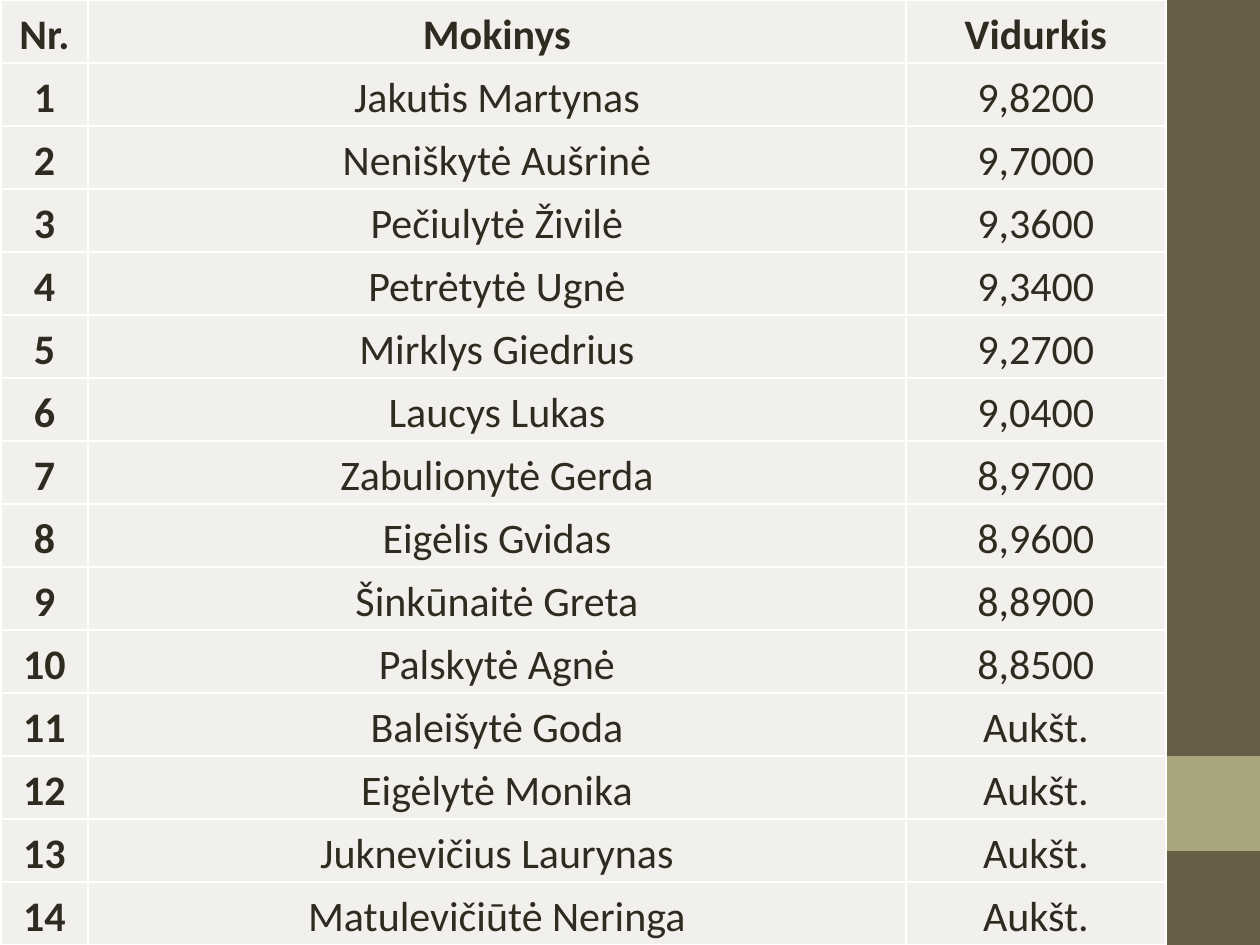
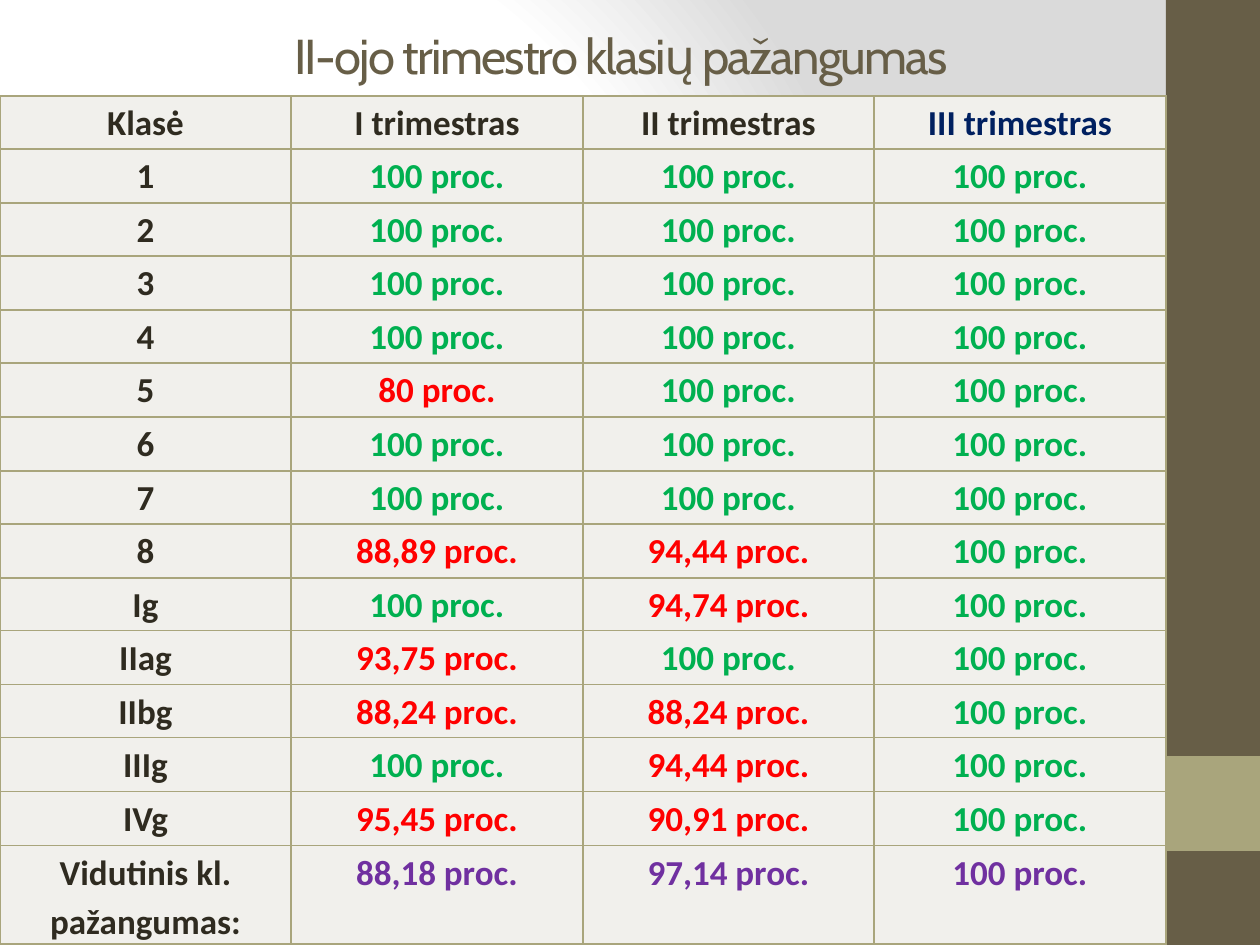
"""Build two school result slides: pupil averages and class progress by trimester."""
from lxml import etree
from pptx import Presentation
from pptx import util as u
from pptx.dml.color import RGBColor
from pptx.enum import shapes, text
from pptx.oxml import parse_xml
from pptx.oxml.ns import nsdecls, qn

THEME = {
    "ink": "2F2B20", "brown": "675E47", "olive": "A9A57C", "cell": "F1F0EC",
    "white": "FFFFFF", "grey": "DADADA", "navy": "002060",
    "full": "00B050", "partial": "FF0000", "average": "7030A0",
    "title_font": "Cabin", "table_font": "Calibri",
    "title_size": 28, "pupil_size": 24, "class_size": 20,
}
PUPILS = [
    ("Jakutis Martynas", "9,8200"), ("Neniškytė Aušrinė", "9,7000"),
    ("Pečiulytė Živilė", "9,3600"), ("Petrėtytė Ugnė", "9,3400"),
    ("Mirklys Giedrius", "9,2700"), ("Laucys Lukas", "9,0400"),
    ("Zabulionytė Gerda", "8,9700"), ("Eigėlis Gvidas", "8,9600"),
    ("Šinkūnaitė Greta", "8,8900"), ("Palskytė Agnė", "8,8500"),
    ("Baleišytė Goda", "Aukšt."), ("Eigėlytė Monika", "Aukšt."),
    ("Juknevičius Laurynas", "Aukšt."), ("Matulevičiūtė Neringa", "Aukšt."),
]
CLASSES = [
    ("1", "100", "100"), ("2", "100", "100"), ("3", "100", "100"),
    ("4", "100", "100"), ("5", "80", "100"), ("6", "100", "100"),
    ("7", "100", "100"), ("8", "88,89", "94,44"), ("Ig", "100", "94,74"),
    ("IIag", "93,75", "100"), ("IIbg", "88,24", "88,24"),
    ("IIIg", "100", "94,44"), ("IVg", "95,45", "90,91"),
    ("Vidutinis kl. pažangumas:", "88,18", "97,14"),
]


def px(n):
    return u.Emu(round(n * 914400 / 126))


def add_grid(s, rows, left, top, widths, heights, size, line, inset, anchor):
    tbl = s.shapes.add_table(len(rows), len(widths), px(left), px(top),
                             px(sum(widths)), px(sum(heights))).table
    tbl.first_row = tbl.horz_banding = False
    for col, w in zip(tbl.columns, widths):
        col.width = px(w)
    for row, h, values in zip(tbl.rows, heights, rows):
        row.height = px(h)
        for cell, value in zip(row.cells, values):
            fmt = {"margin_left": px(inset), "margin_right": px(inset),
                   "margin_top": 0, "margin_bottom": 0, "vertical_anchor": anchor}
            for name, setting in fmt.items():
                setattr(cell, name, setting)
            cell.fill.solid()
            cell.fill.fore_color.rgb = RGBColor.from_string(THEME["cell"])
            pr = cell._tc.get_or_add_tcPr()
            for i, side in enumerate(("lnL", "lnR", "lnT", "lnB")):
                ln = etree.Element(qn("a:" + side), w=str(u.Pt(1)))
                fill = etree.SubElement(ln, qn("a:solidFill"))
                etree.SubElement(fill, qn("a:srgbClr"), val=THEME[line])
                pr.insert(i, ln)
            p = cell.text_frame.paragraphs[0]
            p.alignment = text.PP_ALIGN.CENTER
            p.line_spacing = 1.15
            r = p.add_run()
            r.text = value
            for name, setting in {"name": THEME["table_font"], "bold": True,
                                  "size": u.Pt(THEME[size])}.items():
                setattr(r.font, name, setting)
            r.font.color.rgb = RGBColor.from_string(THEME["ink"])
    return tbl


prs = Presentation()
prs.slide_width, prs.slide_height = px(1260), px(945)
master = prs.slide_master
pupils = prs.slides.add_slide(prs.slide_layouts[6])
progress = prs.slides.add_slide(prs.slide_layouts[5])

stops = "".join(f'<a:gs pos="{pos}000"><a:srgbClr val="{THEME[c]}"/></a:gs>'
                for pos, c in ((0, "white"), (75, "white"), (100, "grey")))
c_sld = master.element.find(qn("p:cSld"))
for old in c_sld.findall(qn("p:bg")):
    c_sld.remove(old)
c_sld.insert(0, parse_xml(
    f'<p:bg {nsdecls("p", "a")}><p:bgPr><a:gradFill rotWithShape="1">'
    f'<a:gsLst>{stops}</a:gsLst><a:path path="circle">'
    '<a:fillToRect l="20000" t="50000" r="100000" b="50000"/></a:path>'
    '</a:gradFill><a:effectLst/></p:bgPr></p:bg>'))

bands = [(0, 945, "brown"), (756, 95, "olive")]
for i, (top, height, color) in enumerate(bands):
    sp = pupils.shapes.add_shape(shapes.MSO_SHAPE.RECTANGLE,
                                 px(1166), px(top), px(94), px(height))
    sp.shadow.inherit = False
    sp.fill.solid()
    sp.fill.fore_color.rgb = RGBColor.from_string(THEME[color])
    sp.line.fill.background()
    master.shapes.element.insert(2 + i, sp.element)

rows = [("Nr.", "Mokinys", "Vidurkis")]
rows += [(str(i), *pupil) for i, pupil in enumerate(PUPILS, 1)]
tbl = add_grid(pupils, rows, 1, 0, (87, 818, 260), [63] * len(rows),
               "pupil_size", "white", 4, text.MSO_ANCHOR.MIDDLE)
for row in list(tbl.rows)[1:]:
    for cell in list(row.cells)[1:]:
        cell.text_frame.paragraphs[0].runs[0].font.bold = False

title = progress.shapes.title
for name, n in {"left": 54, "top": 16, "width": 1134, "height": 77}.items():
    setattr(title, name, px(n))
tf = title.text_frame
tf.auto_size = text.MSO_AUTO_SIZE.NONE
tf.vertical_anchor = text.MSO_ANCHOR.MIDDLE
p = tf.paragraphs[0]
p.alignment = text.PP_ALIGN.CENTER
r = p.add_run()
r.text = "II-ojo trimestro klasių pažangumas"
r.font.name, r.font.size = THEME["title_font"], u.Pt(THEME["title_size"])
r.font.color.rgb = RGBColor.from_string(THEME["brown"])
r._r.get_or_add_rPr().set("spc", "-100")

rows = [("Klasė", "I trimestras", "II trimestras", "III trimestras")]
rows += [(name, *(f"{v} proc." for v in (first, second, "100")))
         for name, first, second in CLASSES]
edges = [750 * i // 14 for i in range(15)]
heights = [b - a for a, b in zip(edges, edges[1:])] + [98]
tbl = add_grid(progress, rows, 0, 96, (291, 292, 291, 292), heights,
               "class_size", "olive", 9, text.MSO_ANCHOR.TOP)
for i, row in enumerate(tbl.rows):
    for cell in list(row.cells)[1:]:
        r = cell.text_frame.paragraphs[0].runs[0]
        if i == 0:
            color = "navy" if r.text == "III trimestras" else "ink"
        elif i == len(CLASSES):
            color = "average"
        else:
            color = "full" if r.text == "100 proc." else "partial"
        r.font.color.rgb = RGBColor.from_string(THEME[color])

prs.save("out.pptx")
